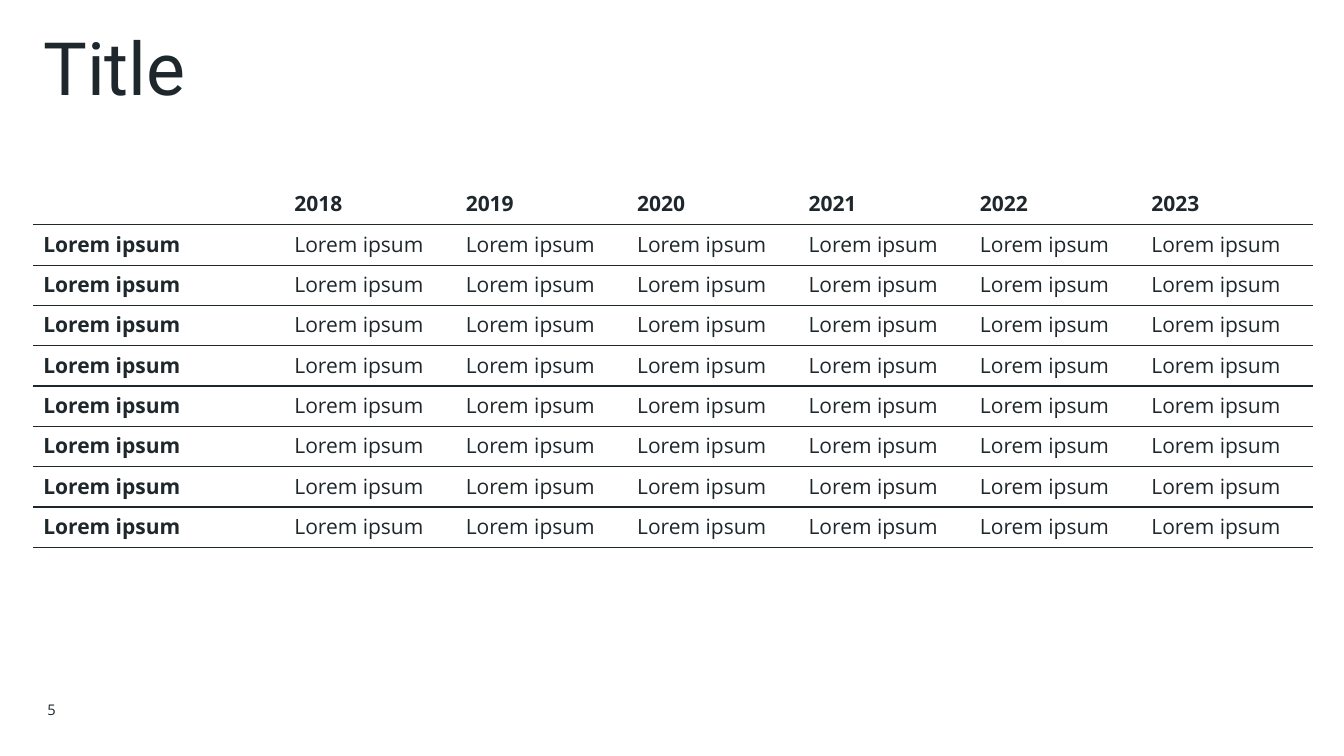
from dataclasses import dataclass

from lxml.etree import SubElement
from pptx import Presentation
from pptx.dml.color import RGBColor
from pptx.enum.text import MSO_ANCHOR, PP_ALIGN
from pptx.oxml.ns import qn
from pptx.slide import Slide
from pptx.table import _Cell
from pptx.text.text import TextFrame
from pptx.util import Inches, Pt

INK = RGBColor(0x1E, 0x27, 0x2C)
HEADING_FONT, BODY_FONT = "Roboto", "Open Sans"
YEARS = [str(year) for year in range(2018, 2024)]
ROW_LABELS = ["Lorem ipsum"] * 8
LABEL_WIDTH, YEAR_WIDTH, ROW_HEIGHT = 2.49, 1.7, 0.4


@dataclass
class Label:
    text: str
    left: float
    top: float
    width: float
    height: float
    size: float
    font: str = BODY_FONT
    align: PP_ALIGN = PP_ALIGN.LEFT
    anchor: MSO_ANCHOR = MSO_ANCHOR.TOP
    spacing: float = 1.0


LABELS = [
    Label("Title", 0.33, 0.3, 12.68, 1.53, 52.5, font=HEADING_FONT, spacing=0.85),
    Label("5", 0, 6.84, 0.65, 0.4, 10.5, align=PP_ALIGN.RIGHT, anchor=MSO_ANCHOR.MIDDLE),
]


def write(tf: TextFrame, text: str, *, size: float, font: str = BODY_FONT,
          bold: bool = False, align: PP_ALIGN = PP_ALIGN.LEFT,
          spacing: float = 1.0) -> None:
    p = tf.paragraphs[0]
    p.alignment = align
    p.line_spacing = spacing
    p.font.size = Pt(size)
    if not text:
        return
    r = p.add_run()
    r.text = text
    r.font.name = font
    r.font.size = Pt(size)
    r.font.bold = bold
    r.font.color.rgb = INK


def add_label(s: Slide, label: Label) -> None:
    sp = s.shapes.add_textbox(Inches(label.left), Inches(label.top),
                              Inches(label.width), Inches(label.height))
    tf = sp.text_frame
    tf.word_wrap = True
    tf.vertical_anchor = label.anchor
    write(tf, label.text, size=label.size, font=label.font,
          align=label.align, spacing=label.spacing)


def rule_cell(cell: _Cell, *, top: bool) -> None:
    """Draw horizontal rules only; the other sides stay empty."""
    tcPr = cell._tc.get_or_add_tcPr()
    for side in ("a:lnL", "a:lnR", "a:lnT", "a:lnB"):
        visible = side == "a:lnB" or (side == "a:lnT" and top)
        ln = SubElement(tcPr, qn(side), w=str(Pt(1)))
        if visible:
            fill = SubElement(ln, qn("a:solidFill"))
            SubElement(fill, qn("a:srgbClr"), val=str(INK))
        else:
            SubElement(ln, qn("a:noFill"))
    cell.fill.background()


def add_year_table(s: Slide) -> None:
    rows = [["", *YEARS]] + [[label] + ["Lorem ipsum"] * len(YEARS) for label in ROW_LABELS]
    widths = [LABEL_WIDTH] + [YEAR_WIDTH] * len(YEARS)
    frame = s.shapes.add_table(len(rows), len(widths), Inches(0.33), Inches(1.83),
                               Inches(sum(widths)), Inches(ROW_HEIGHT * len(rows)))
    table = frame.table
    table.first_row = table.horz_banding = False
    for column, width in zip(table.columns, widths):
        column.width = Inches(width)
    for i, values in enumerate(rows):
        for j, text in enumerate(values):
            cell = table.cell(i, j)
            write(cell.text_frame, text, size=15, bold=i == 0 or j == 0)
            rule_cell(cell, top=i > 0)


def main() -> None:
    prs = Presentation()
    prs.slide_width, prs.slide_height = Inches(13.33), Inches(7.5)
    s = prs.slides.add_slide(prs.slide_layouts[6])

    # Title and page number
    for label in LABELS:
        add_label(s, label)

    # Table of years
    add_year_table(s)

    prs.save("out.pptx")


if __name__ == "__main__":
    main()
